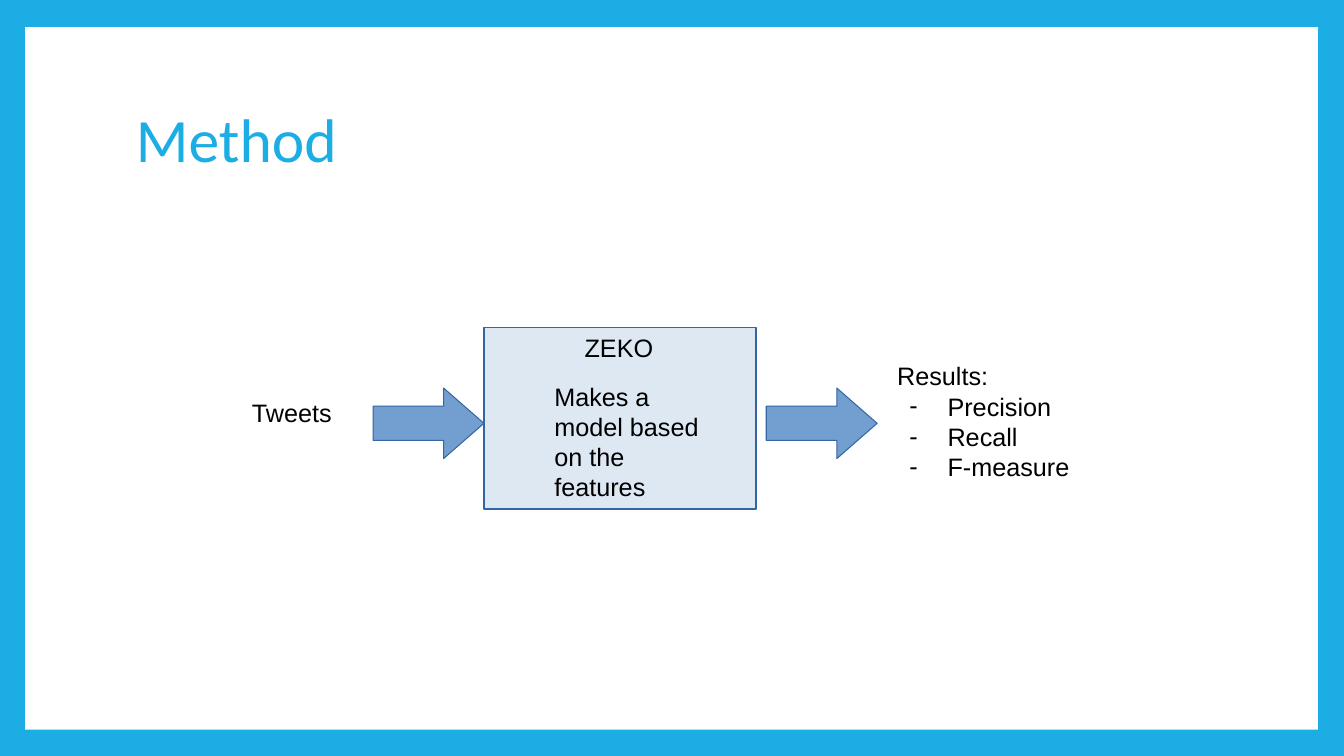
from lxml import etree
from pptx import Presentation
from pptx.dml.color import RGBColor
from pptx.enum.shapes import MSO_SHAPE
from pptx.enum.text import MSO_ANCHOR
from pptx.oxml.ns import qn
from pptx.util import Inches, Pt

RECT, ARROW = MSO_SHAPE.RECTANGLE, MSO_SHAPE.RIGHT_ARROW
TOP, MIDDLE = MSO_ANCHOR.TOP, MSO_ANCHOR.MIDDLE
SKY = RGBColor(0x1C, 0xAD, 0xE4)
WHITE = RGBColor(0xFF, 0xFF, 0xFF)
BLACK = RGBColor(0x00, 0x00, 0x00)
BLUE = RGBColor(0x72, 0x9F, 0xCF)
NAVY = RGBColor(0x34, 0x65, 0xA4)

prs = Presentation()
prs.slide_width, prs.slide_height = Inches(13.33), Inches(7.5)
s = prs.slides.add_slide(prs.slide_layouts[6])


def add_box(shape, x, y, w, h, fill, line=None, width=1):
    sp = s.shapes.add_shape(shape, Inches(x), Inches(y), Inches(w), Inches(h))
    sp.shadow.inherit = False
    sp.fill.solid()
    sp.fill.fore_color.rgb = fill
    if line is None:
        sp.line.fill.background()
    else:
        sp.line.color.rgb = line
        sp.line.width = Pt(width)
    return sp


def add_text(x, y, w, h, lines, size=18, font="Arial", color=BLACK, anchor=TOP):
    tf = s.shapes.add_textbox(Inches(x), Inches(y), Inches(w), Inches(h)).text_frame
    tf.word_wrap = True
    tf.vertical_anchor = anchor
    for i, line in enumerate(lines):
        p = tf.paragraphs[0] if i == 0 else tf.add_paragraph()
        r = p.add_run()
        r.text = line
        r.font.size = Pt(size)
        r.font.name = font
        r.font.color.rgb = color
    return tf


# Frame and title
s.background.fill.solid()
s.background.fill.fore_color.rgb = SKY
add_box(RECT, 0.25, 0.27, 12.82, 6.97, WHITE)
title = add_text(1.25, 0.67, 10.8, 1.48, ["Method"], 44, "Calibri", SKY, MIDDLE)
title.paragraphs[0].line_spacing = 0.9

# Model box with a see-through fill
model = add_box(RECT, 4.8, 3.25, 2.7, 1.8, BLUE, NAVY)
rgb = model.fill._xPr.find(qn("a:solidFill")).find(qn("a:srgbClr"))
etree.SubElement(rgb, qn("a:alpha"), val="24000")
add_text(5.7, 3.25, 0.94, 0.4, ["ZEKO"])
add_text(5.4, 3.73, 1.7, 1.22, ["Makes a model based on the features"])

# Arrows into and out of the model
for x in (3.7, 7.6):
    sp = add_box(ARROW, x, 3.85, 1.1, 0.7, BLUE, NAVY, 0.75)
    sp.adjustments[0] = 0.34 / 0.7
    sp.adjustments[1] = 0.4 / 0.7

# Input and results
add_text(2.4, 3.89, 1.1, 0.66, ["Tweets"])
results = add_text(8.8, 3.53, 2.1, 1.38,
                   ["Results:", "Precision", "Recall", "F-measure"])
for p in results.paragraphs[1:]:
    pPr = p._p.get_or_add_pPr()
    pPr.set("marL", str(Inches(0.5)))
    pPr.set("indent", str(Inches(-0.38)))
    color = etree.SubElement(pPr, qn("a:buClr"))
    etree.SubElement(color, qn("a:srgbClr"), val=str(BLACK))
    etree.SubElement(pPr, qn("a:buFont"), typeface="Arial")
    etree.SubElement(pPr, qn("a:buChar"), char="-")

prs.save("out.pptx")
